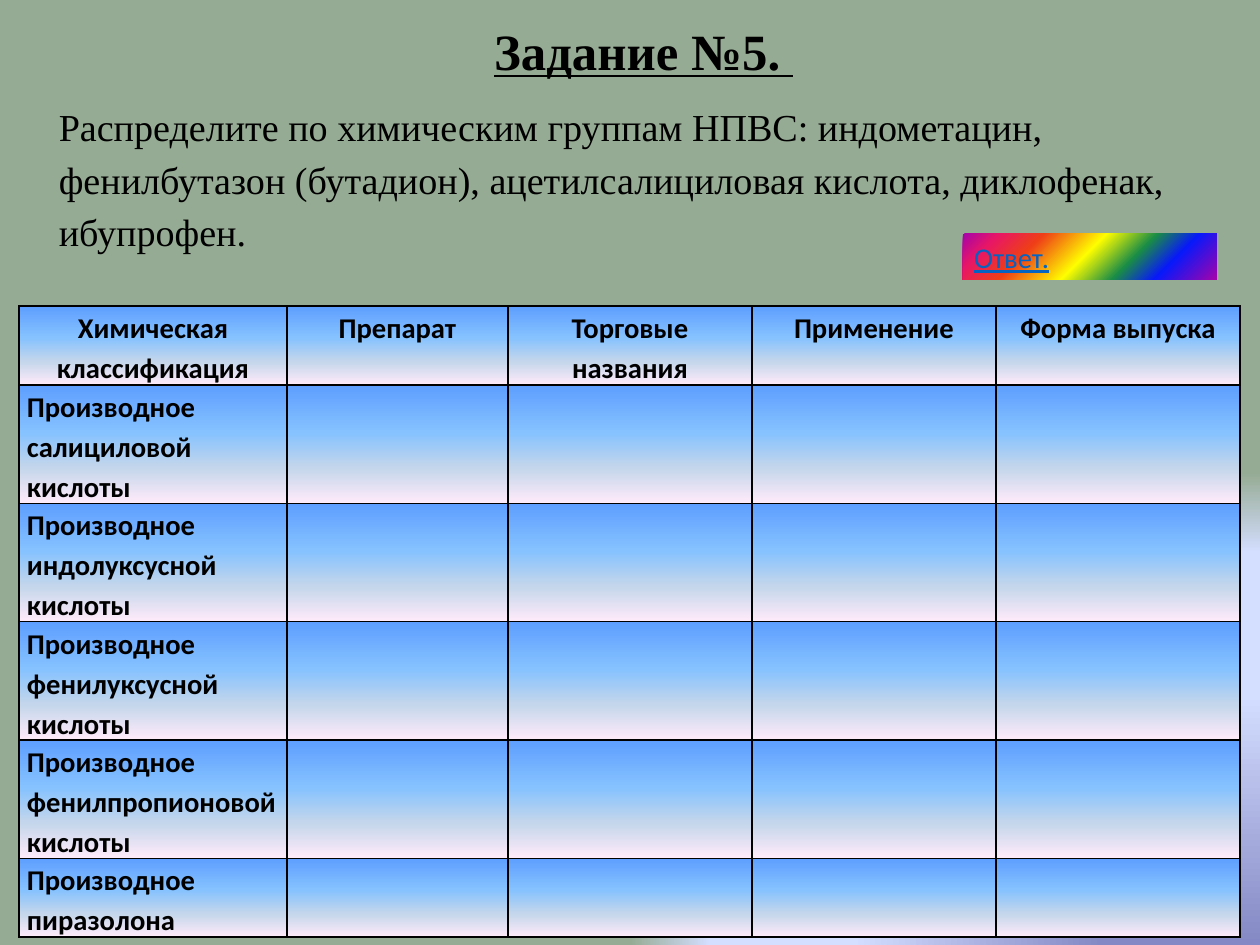
from dataclasses import dataclass

from lxml.etree import SubElement
from pptx import Presentation
from pptx.dml.color import RGBColor
from pptx.enum.shapes import MSO_SHAPE
from pptx.enum.text import MSO_ANCHOR, MSO_AUTO_SIZE, PP_ALIGN
from pptx.oxml import parse_xml
from pptx.oxml.ns import nsdecls, qn
from pptx.util import Emu, Pt


@dataclass(frozen=True)
class Theme:
    ink: str = "000000"
    link: str = "0563C1"
    serif: str = "Times New Roman"
    sans: str = "Calibri"
    title: int = 32
    body: int = 24
    small: int = 18
    back: tuple = ((0, "8488C4"), (53, "D4DEFF"), (83, "D4DEFF"), (100, "96AB94"))
    sky: tuple = ((0, "5E9EFF"), (40, "85C2FF"), (70, "C4D6EB"), (100, "FFEBFA"))
    rainbow: tuple = ((0, "A603AB"), (21, "0819FB"), (35, "1A8D48"), (52, "FFFF00"),
                      (73, "EE3F17"), (88, "E81766"), (100, "A603AB"))


THEME = Theme()
SCALE = 8000  # EMU per px
WIDTH, HEIGHT = 1260, 945
TASK_BOX = (19, 5, 1221, 514)
TABLE_BOX = (19, 306, 1221, 630)
ANSWER_BOX = (963, 234, 254, 46)

TITLE = "Задание №5. "
TASK = ("Распределите по химическим группам НПВС: индометацин, фенилбутазон "
        "(бутадион), ацетилсалициловая кислота, диклофенак, ибупрофен.")
HEADS = ("Химическая классификация", "Препарат", "Торговые названия",
         "Применение", "Форма выпуска")
GROUPS = ("салициловой кислоты", "индолуксусной кислоты", "фенилуксусной кислоты",
          "фенилпропионовой кислоты", "пиразолона")
COLS = (268, 221, 244, 244, 244)
ROWS = (79, 118, 118, 118, 118, 79)


def px(n):
    return Emu(n * SCALE)


def blend(fill, root, stops, shade=None):
    """Fill with a gradient: downward, or spreading from the lower right corner."""
    fill.gradient()
    grad = root.find(".//" + qn("a:gradFill"))
    for child in list(grad):
        grad.remove(child)
    line = SubElement(grad, qn("a:gsLst"))
    for place, color in stops:
        stop = SubElement(line, qn("a:gs"), pos=str(place * 1000))
        SubElement(stop, qn("a:srgbClr"), val=color)
    if shade:
        way = SubElement(grad, qn("a:path"), {"path": shade})
        SubElement(way, qn("a:fillToRect"), l="100000", t="100000")
    else:
        SubElement(grad, qn("a:lin"), ang="5400000", scaled="0")


def style(para, face, size, color=THEME.ink, bold=False, under=False):
    for run in para.runs:
        font = run.font
        font.name, font.size = face, Pt(size)
        font.bold, font.underline = bold, under
        font.color.rgb = RGBColor.from_string(color)


def space(para, align):
    para.alignment = align
    para.line_spacing = 1.15
    para.space_after = Pt(10)


def frame(cell):
    props = cell._tc.get_or_add_tcPr()
    for i, side in enumerate(("lnL", "lnR", "lnT", "lnB")):
        props.insert(i, parse_xml(
            f'<a:{side} {nsdecls("a")} w="12700"><a:solidFill>'
            f'<a:srgbClr val="{THEME.ink}"/></a:solidFill></a:{side}>'))


def add_task(slide, box):
    text = slide.shapes.add_textbox(*map(px, box)).text_frame
    text.word_wrap = True
    text.auto_size = MSO_AUTO_SIZE.SHAPE_TO_FIT_TEXT
    text.text = f"{TITLE}\n{TASK}"
    head, body = text.paragraphs
    for para, align in ((head, PP_ALIGN.CENTER), (body, PP_ALIGN.LEFT)):
        space(para, align)
        props = para._p.get_or_add_pPr()
        props.set("marL", "228600")
        props.set("indent", "0")
    style(head, THEME.serif, THEME.title, bold=True, under=True)
    style(body, THEME.serif, THEME.body)


def add_grid(slide, box):
    table = slide.shapes.add_table(len(ROWS), len(COLS), *map(px, box)).table
    table.first_row = table.horz_banding = False
    for col, width in zip(table.columns, COLS):
        col.width = px(width)
    for row, height in zip(table.rows, ROWS):
        row.height = px(height)
    for cell in table.iter_cells():
        cell.margin_left = cell.margin_right = px(8)
        cell.margin_top = cell.margin_bottom = 0
        blend(cell.fill, cell._tc, THEME.sky)
        frame(cell)
    labels = [(0, c, head, PP_ALIGN.CENTER) for c, head in enumerate(HEADS)]
    labels += [(r, 0, f"Производное {group}", PP_ALIGN.LEFT)
               for r, group in enumerate(GROUPS, 1)]
    for r, c, label, align in labels:
        para = table.cell(r, c).text_frame.paragraphs[0]
        para.text = label
        space(para, align)
        style(para, THEME.sans, THEME.small, bold=True)


def add_answer(slide, box):
    button = slide.shapes.add_shape(MSO_SHAPE.RECTANGLE, *map(px, box))
    button.shadow.inherit = False
    button.line.fill.background()
    blend(button.fill, button._element, THEME.rainbow, "circle")
    text = button.text_frame
    text.word_wrap = True
    text.auto_size = MSO_AUTO_SIZE.SHAPE_TO_FIT_TEXT
    text.vertical_anchor = MSO_ANCHOR.TOP
    text.text = "Ответ."
    para = text.paragraphs[0]
    para.alignment = PP_ALIGN.LEFT
    style(para, THEME.sans, THEME.small, THEME.link, under=True)


def main():
    deck = Presentation()
    deck.slide_width, deck.slide_height = px(WIDTH), px(HEIGHT)
    slide = deck.slides.add_slide(deck.slide_layouts[6])
    blend(slide.background.fill, slide._element, THEME.back, "rect")
    add_task(slide, TASK_BOX)
    add_grid(slide, TABLE_BOX)
    add_answer(slide, ANSWER_BOX)
    deck.save("out.pptx")


if __name__ == "__main__":
    main()
